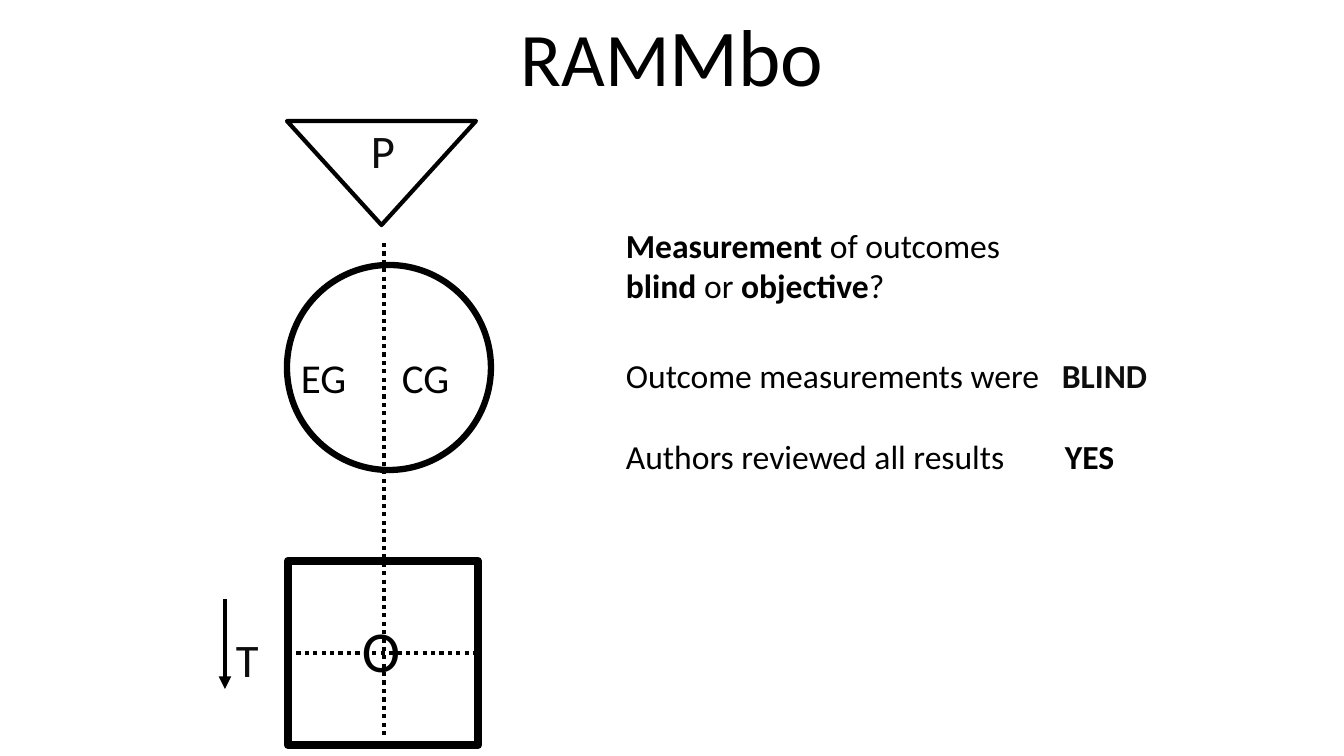
"""Build the RAMMbo slide on blind or objective measurement of outcomes."""
from lxml import etree
from pptx import Presentation
from pptx import util as u
from pptx.dml.color import RGBColor
from pptx.enum import dml, shapes, text
from pptx.oxml.ns import qn

BLACK = RGBColor(0x00, 0x00, 0x00)
SOFT_BLACK = RGBColor(0x0D, 0x0D, 0x0D)
FONT = "Calibri"
SCALE = 914400 / 100.8
SLIDE_SIZE = (1344, 756)

OUTLINES = {
    "population": (shapes.MSO_SHAPE.ISOSCELES_TRIANGLE, (287, 121, 189, 104), 3, 180),
    "groups": (shapes.MSO_SHAPE.OVAL, (287, 265, 204, 205), 4.5, 0),
    "outcomes": (shapes.MSO_SHAPE.RECTANGLE, (288, 561, 190, 184), 6, 0),
}
TIME_ARROW = (225, 599, 225, 689)
GROUP_DIVIDER = (384, 243, 384, 737)
OUTCOME_DIVIDER = (288, 653, 478, 653)

PLAIN = {"size": u.Pt(24), "bold": False}
STRONG = {"size": u.Pt(24), "bold": True}
LETTER = {"size": u.Pt(33.3)}
TITLE = {"line_spacing": 0.9, "alignment": text.PP_ALIGN.CENTER}
MIDDLE = {"vertical_anchor": text.MSO_ANCHOR.MIDDLE}

TEXTS = [
    ((107, 0, 1130, 121), MIDDLE, [
        (TITLE, None, [("RAM", {"size": u.Pt(54)}, BLACK),
                       ("Mbo", {"size": u.Pt(57.6)}, BLACK)])]),
    ((291, 348, 180, 60), {}, [
        ({}, 101, [("EG\tCG", {"size": u.Pt(29.3)}, BLACK)])]),
    ((352, 610, 59, 81), {}, [({}, None, [("O", {"size": u.Pt(41.3)}, BLACK)])]),
    ((226, 626, 44, 68), {}, [({}, None, [("T", LETTER, SOFT_BLACK)])]),
    ((361, 117, 45, 68), {}, [({}, None, [("P", LETTER, SOFT_BLACK)])]),
    ((616, 220, 616, 132), {}, [
        ({}, None, [("Measurement ", STRONG, BLACK), ("of outcomes", PLAIN, BLACK)]),
        ({}, None, [("blind ", STRONG, BLACK), ("or ", PLAIN, BLACK),
                    ("objective", STRONG, BLACK), ("?", PLAIN, BLACK)])]),
    ((616, 350, 635, 295), {}, [
        ({}, 436, [("Outcome measurements were\t", PLAIN, BLACK),
                   ("BLIND", STRONG, SOFT_BLACK)]),
        ({"space_before": u.Pt(29)}, 439, [("Authors reviewed all results\t", PLAIN, BLACK),
                                           ("YES", STRONG, BLACK)])]),
]


def px(*lengths):
    return [u.Emu(round(length * SCALE)) for length in lengths]


def apply(target, values):
    for name, value in values.items():
        setattr(target, name, value)


def add_outline(page, kind, frame, weight, rotation):
    shape = page.shapes.add_shape(kind, *px(*frame))
    shape.shadow.inherit = False
    shape.rotation = rotation
    shape.fill.background()
    shape.line.color.rgb = BLACK
    shape.line.width = u.Pt(weight)
    return shape


def add_line(page, ends, dotted=True):
    line = page.shapes.add_connector(shapes.MSO_CONNECTOR.STRAIGHT, *px(*ends))
    line.line.color.rgb = BLACK
    line.line.width = u.Pt(3)
    if dotted:
        line.line.dash_style = dml.MSO_LINE.ROUND_DOT
    else:
        etree.SubElement(line.line._get_or_add_ln(), qn("a:tailEnd"), type="triangle")
    etree.SubElement(line._element.spPr, qn("a:effectLst"))
    return line


def add_text(page, frame, body, paragraphs):
    box = page.shapes.add_textbox(*px(*frame)).text_frame
    apply(box, {"word_wrap": True, **body})
    for index, (layout, tab, spans) in enumerate(paragraphs):
        para = box.add_paragraph() if index else box.paragraphs[0]
        apply(para, layout)
        if tab:
            stops = etree.SubElement(para._p.get_or_add_pPr(), qn("a:tabLst"))
            etree.SubElement(stops, qn("a:tab"), pos=str(px(tab)[0]), algn="l")
        for words, style, color in spans:
            span = para.add_run()
            span.text = words
            apply(span.font, {"name": FONT, **style})
            span.font.color.rgb = color


def main():
    deck = Presentation()
    deck.slide_width, deck.slide_height = px(*SLIDE_SIZE)
    page = deck.slides.add_slide(deck.slide_layouts[6])
    outlines = {name: add_outline(page, *parts) for name, parts in OUTLINES.items()}
    add_line(page, TIME_ARROW, dotted=False)
    add_line(page, GROUP_DIVIDER)
    divider = add_line(page, OUTCOME_DIVIDER)
    divider.begin_connect(outlines["outcomes"], 1)
    divider.end_connect(outlines["outcomes"], 3)
    for parts in TEXTS:
        add_text(page, *parts)
    deck.save("out.pptx")


if __name__ == "__main__":
    main()
